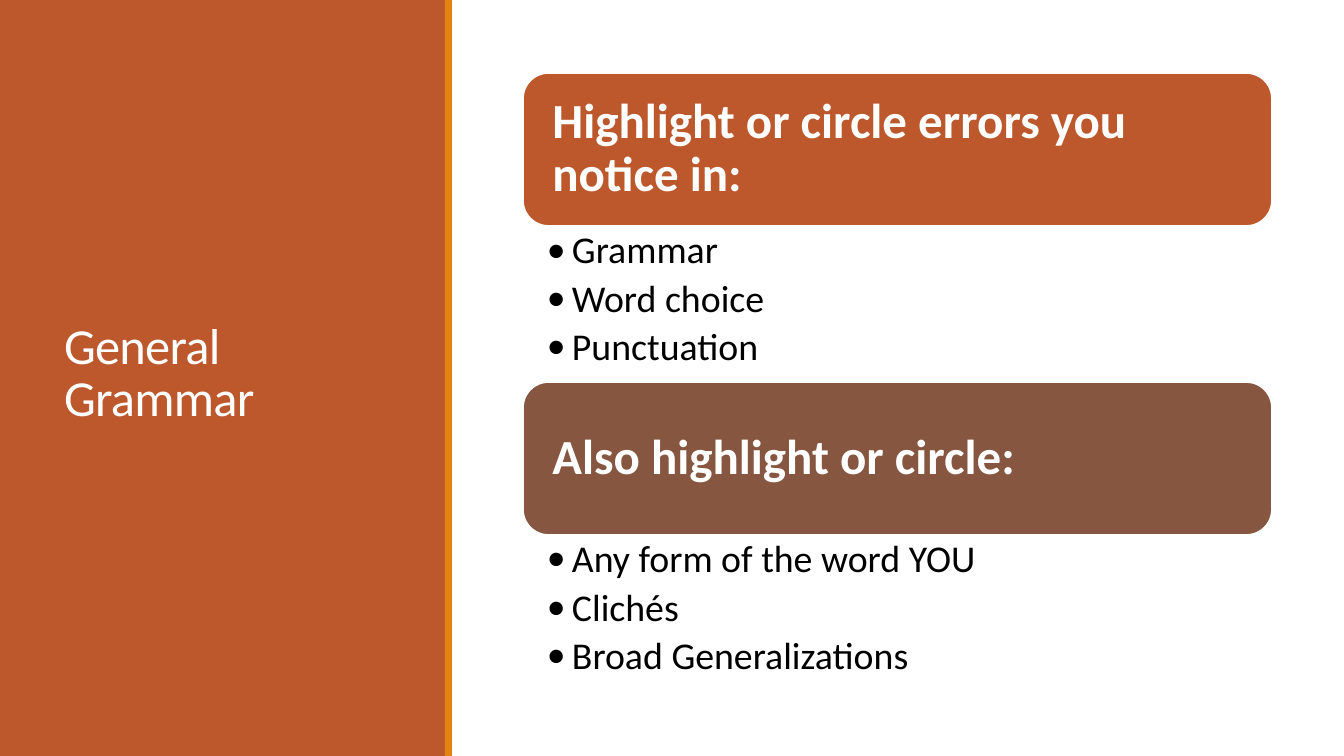
from pptx import Presentation
from pptx.dml.color import RGBColor
from pptx.enum.shapes import MSO_SHAPE
from pptx.enum.text import MSO_ANCHOR, PP_ALIGN
from pptx.oxml.ns import qn
from pptx.util import Emu, Pt
from lxml import etree

RECT, ROUNDED = MSO_SHAPE.RECTANGLE, MSO_SHAPE.ROUNDED_RECTANGLE
TOP, MIDDLE = MSO_ANCHOR.TOP, MSO_ANCHOR.MIDDLE
LEFT = PP_ALIGN.LEFT

EMU_PER_PX = 914400 / 100.8
SLIDE_W, SLIDE_H = 1344, 756
FONT = "Calibri"
RUST, ORANGE, BROWN = "BD582C", "E48312", "865640"
WHITE, BLACK = "FFFFFF", "000000"

# Section layout: a heading card with its bullets directly below
SECTION_X, SECTION_W, SECTION_TOP = 523, 749, 73
CARD_H, BULLETS_H = 153, 156
BULLET_INDENT = 25

SECTIONS = [
    ("Highlight or circle errors you notice in:", RUST,
     ["Grammar", "Word choice", "Punctuation"]),
    ("Also highlight or circle:", BROWN,
     ["Any form of the word YOU", "Clichés", "Broad Generalizations"]),
]


def px(value):
    return Emu(round(value * EMU_PER_PX))


def rgb(value):
    return RGBColor.from_string(value)


def add_block(slide, preset, box, fill, outline=None):
    block = slide.shapes.add_shape(preset, *map(px, box))
    block.shadow.inherit = False
    block.fill.solid()
    block.fill.fore_color.rgb = rgb(fill)
    if outline:
        block.line.color.rgb = rgb(outline)
        block.line.width = Pt(1.25)
    else:
        block.line.fill.background()
    return block


def write(frame, text, size, color, anchor, insets, spacing, bold=False):
    """Fill a text frame; insets are left, top, right, bottom."""
    frame.word_wrap = True
    frame.vertical_anchor = anchor
    (frame.margin_left, frame.margin_top,
     frame.margin_right, frame.margin_bottom) = map(px, insets)
    frame.text = text
    for paragraph in frame.paragraphs:
        paragraph.alignment = LEFT
        paragraph.line_spacing = spacing
        for run in paragraph.runs:
            run.font.name = FONT
            run.font.size = Pt(size)
            run.font.bold = bold
            run.font.color.rgb = rgb(color)


def add_bullet(paragraph):
    paragraph.space_after = Pt(5.4)
    properties = paragraph._p.get_or_add_pPr()
    properties.set("marL", str(px(BULLET_INDENT)))
    properties.set("indent", str(-px(BULLET_INDENT)))
    etree.SubElement(properties, qn("a:buFont")).set("typeface", FONT)
    etree.SubElement(properties, qn("a:buChar")).set("char", "•")


def add_title(slide, text):
    title = slide.shapes.add_textbox(*map(px, (54, 57, 340, 636)))
    write(title.text_frame, text, 36, WHITE, MIDDLE, (10, 5, 10, 5), 0.85)
    for run in title.text_frame.paragraphs[0].runs:
        run.font._element.set("spc", "-50")


def add_section(slide, top, heading, color, items):
    card = add_block(slide, ROUNDED, (SECTION_X, top, SECTION_W, CARD_H),
                     color, WHITE)
    write(card.text_frame, heading, 35, WHITE, MIDDLE, (22, 22, 22, 22),
          0.9, bold=True)

    bullets = slide.shapes.add_textbox(
        *map(px, (SECTION_X, top + CARD_H, SECTION_W, BULLETS_H)))
    write(bullets.text_frame, "\n".join(items), 27, BLACK, TOP,
          (24, 5, 27, 5), 0.9)
    for paragraph in bullets.text_frame.paragraphs:
        add_bullet(paragraph)


def main():
    deck = Presentation()
    deck.slide_width, deck.slide_height = px(SLIDE_W), px(SLIDE_H)
    slide = deck.slides.add_slide(deck.slide_layouts[6])

    # Title panel with its accent stripe
    add_block(slide, RECT, (0, 0, 446, SLIDE_H), RUST)
    add_title(slide, "General Grammar")
    add_block(slide, RECT, (445, 0, 7, SLIDE_H), ORANGE)

    # Checklist sections
    for index, section in enumerate(SECTIONS):
        add_section(slide, SECTION_TOP + index * (CARD_H + BULLETS_H), *section)

    deck.save("out.pptx")


if __name__ == "__main__":
    main()
